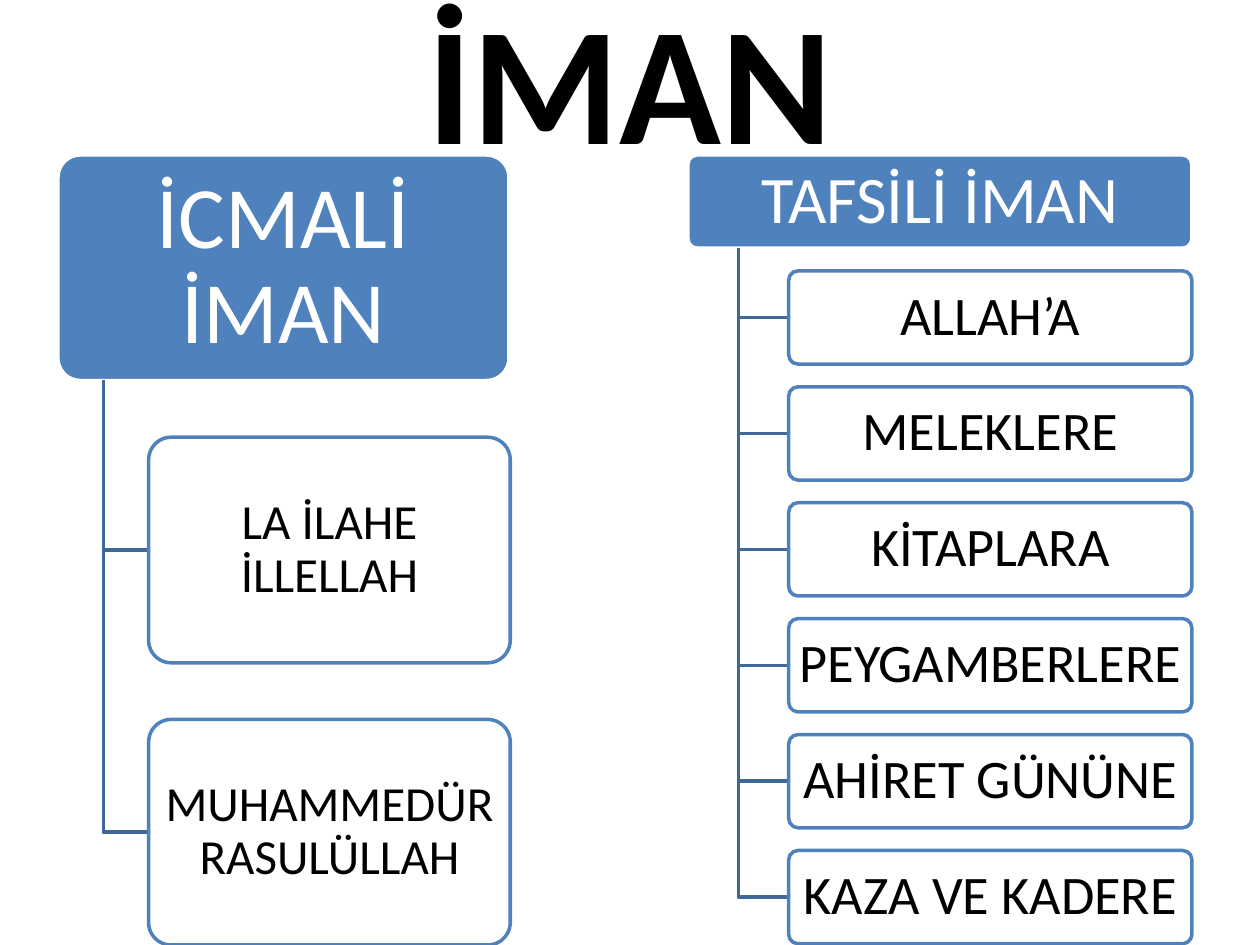
from lxml.etree import SubElement
from pptx import Presentation
from pptx.dml.color import RGBColor
from pptx.enum.shapes import MSO_SHAPE as Shape
from pptx.enum.text import MSO_ANCHOR as Anchor, PP_ALIGN as Align
from pptx.oxml.ns import qn
from pptx.util import Inches, Pt

TITLE = "İMAN"
TREES = [
    dict(head="İCMALİ İMAN", left=0.46, wide=3.58, tall=1.79, step=2.24,
         stem=0.82, kid=1.18, span=2.87, sizes=(50, 28), pads=(0.1, 0.06),
         items=["LA İLAHE İLLELLAH", "MUHAMMEDÜR RASULÜLLAH"]),
    dict(head="TAFSİLİ İMAN", left=5.46, wide=4, tall=0.74, step=0.92,
         stem=5.86, kid=6.26, span=3.2, sizes=(38, 31), pads=(0.08, 0.06),
         items=["ALLAH’A", "MELEKLERE", "KİTAPLARA", "PEYGAMBERLERE",
                "AHİRET GÜNÜNE", "KAZA VE KADERE"]),
]
TOP = 1.23
BLUE, DARK, WHITE, BLACK = "4F81BD", "3F6797", "FFFFFF", "000000"


def tint(part, code):
    part.solid()
    part.fore_color.rgb = RGBColor.from_string(code)


def edge(shape, code):
    shape.shadow.inherit = False
    tint(shape.line.fill, code)
    shape.line.width = Pt(2)


def write(shape, text, size, code, bold=False, gap=1):
    frame = shape.text_frame
    frame.text = text
    frame.word_wrap = True
    frame.vertical_anchor = Anchor.MIDDLE
    para = frame.paragraphs[0]
    para.alignment = Align.CENTER
    para.line_spacing = gap
    font = para.runs[0].font
    font.name, font.size, font.bold = "Calibri", Pt(size), bold
    tint(font.fill, code)


def card(slide, spot, text, size, pad, fill, line, ink):
    box = slide.shapes.add_shape(Shape.ROUNDED_RECTANGLE, *map(Inches, spot))
    box.adjustments[0] = 0.1
    tint(box.fill, fill)
    edge(box, line)
    frame = box.text_frame
    frame.margin_left = frame.margin_right = Inches(pad)
    frame.margin_top = frame.margin_bottom = Inches(pad * 0.67)
    write(box, text, size, ink, gap=0.9)
    return box


def elbow(slide, x, top, end, low):
    pen = slide.shapes.build_freeform(Inches(x), Inches(top))
    pen.add_line_segments([(Inches(x), Inches(low)), (Inches(end), Inches(low))],
                          close=False)
    path = pen.convert_to_shape()
    path.fill.background()
    edge(path, DARK)


def grow(slide, tree):
    tall = tree["tall"]
    big, small = tree["sizes"]
    wide_pad, thin_pad = tree["pads"]
    card(slide, (tree["left"], TOP, tree["wide"], tall), tree["head"],
         big, wide_pad, BLUE, WHITE, WHITE)
    for row, text in enumerate(tree["items"], 1):
        y = TOP + row * tree["step"]
        elbow(slide, tree["stem"], TOP + tall, tree["kid"], y + tall / 2)
        box = card(slide, (tree["kid"], y, tree["span"], tall), text,
                   small, thin_pad, WHITE, BLUE, BLACK)
        hue = box.fill._xPr.find(qn("a:solidFill"))[0]
        SubElement(hue, qn("a:alpha"), val="90000")


def main():
    deck = Presentation()
    deck.slide_width, deck.slide_height = Inches(10), Inches(7.5)
    slide = deck.slides.add_slide(deck.slide_layouts[6])
    title = slide.shapes.add_textbox(0, 0, deck.slide_width, Inches(TOP))
    write(title, TITLE, 96, BLACK, bold=True)
    for tree in TREES:
        grow(slide, tree)
    deck.save("out.pptx")


if __name__ == "__main__":
    main()
